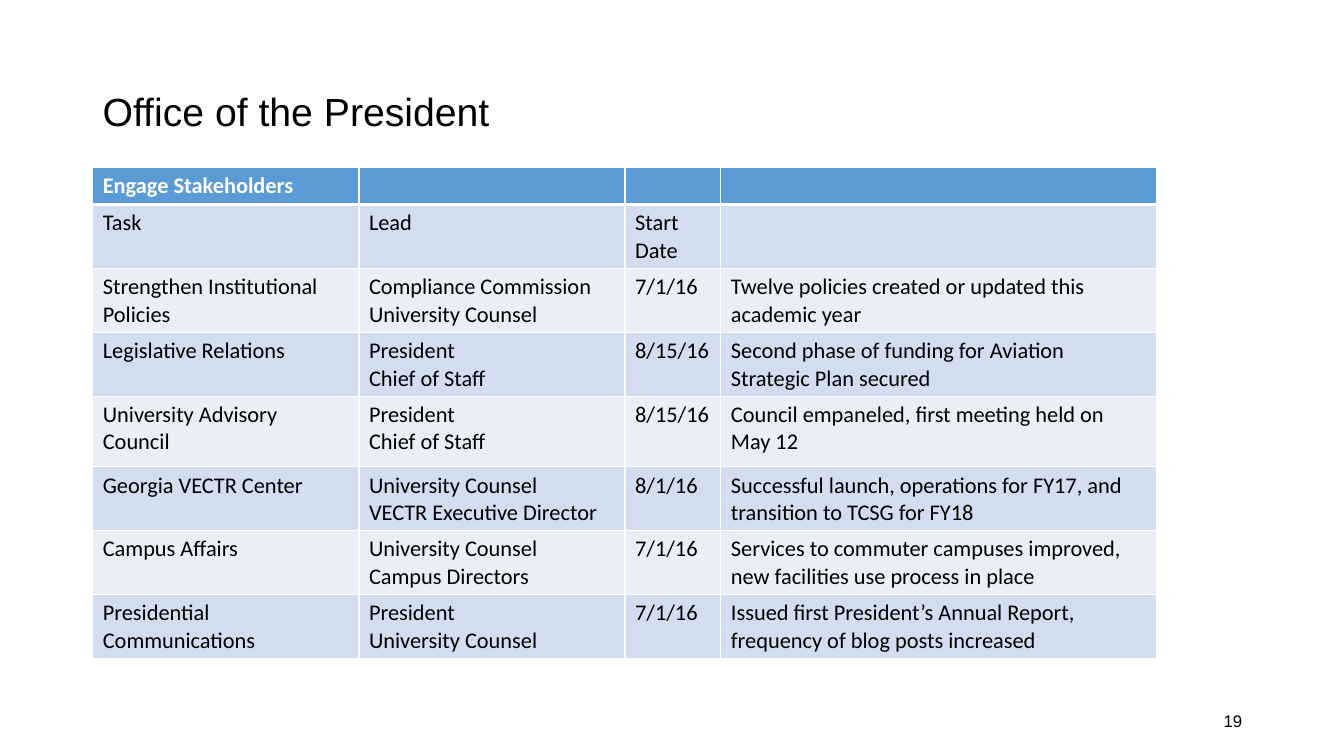
"""Build the Office of the President stakeholder engagement slide."""
from dataclasses import dataclass

from lxml.etree import SubElement
from pptx import Presentation
from pptx.dml.color import RGBColor
from pptx.enum.text import MSO_ANCHOR, PP_ALIGN
from pptx.oxml.ns import qn
from pptx.util import Inches, Pt


@dataclass(frozen=True)
class Theme:
    heading_font: str = "Arial"
    body_font: str = "Calibri"
    title_size: int = 28
    table_size: int = 16
    number_size: int = 12
    black: str = "000000"
    white: str = "FFFFFF"
    header_fill: str = "5B9BD5"
    band_fills: tuple = ("D2DEEF", "EAEFF7")


theme = Theme()


def add_text(paragraph, text, font, size, color, bold=False):
    run = paragraph.add_run()
    run.text = text
    run.font.name = font
    run.font.size = Pt(size)
    run.font.bold = bold
    run.font.color.rgb = RGBColor.from_string(color)


def add_border(cell, side, width):
    line = SubElement(cell._tc.get_or_add_tcPr(), qn(f"a:{side}"), w=str(Pt(width)))
    fill = SubElement(line, qn("a:solidFill"))
    SubElement(fill, qn("a:srgbClr"), val=theme.white)


presentation = Presentation()
presentation.slide_width = Inches(13.33)
presentation.slide_height = Inches(7.5)
slide = presentation.slides.add_slide(presentation.slide_layouts[6])

labels = [
    ("Office of the President", (0.92, 0.4, 11.5, 1.45), theme.title_size, PP_ALIGN.LEFT, 0.9),
    ("19", (9.42, 6.95, 3, 0.4), theme.number_size, PP_ALIGN.RIGHT, 1.0),
]
for text, position, size, alignment, spacing in labels:
    shape = slide.shapes.add_textbox(*map(Inches, position))
    shape.text_frame.word_wrap = True
    shape.text_frame.vertical_anchor = MSO_ANCHOR.MIDDLE
    paragraph = shape.text_frame.paragraphs[0]
    paragraph.alignment = alignment
    paragraph.line_spacing = spacing
    add_text(paragraph, text, theme.heading_font, size, theme.black)

rows = [
    ("Engage Stakeholders", "", "", ""),
    ("Task", "Lead", "Start Date", ""),
    ("Strengthen Institutional Policies", "Compliance Commission University Counsel", "7/1/16",
     "Twelve policies created or updated this academic year"),
    ("Legislative Relations", "President\nChief of Staff", "8/15/16",
     "Second phase of funding for Aviation Strategic Plan secured"),
    ("University Advisory Council", "President\nChief of Staff", "8/15/16",
     "Council empaneled, first meeting held on May 12"),
    ("Georgia VECTR Center", "University Counsel\nVECTR Executive Director", "8/1/16",
     "Successful launch, operations for FY17, and transition to TCSG for FY18"),
    ("Campus Affairs", "University Counsel\nCampus Directors", "7/1/16",
     "Services to commuter campuses improved, new facilities use process in place"),
    ("Presidential Communications", "President\nUniversity Counsel", "7/1/16",
     "Issued first President’s Annual Report, frequency of blog posts increased"),
]
column_widths = [2.64, 2.64, 0.95, 4.32]
row_heights = [0.37, 0.63, 0.63, 0.63, 0.7, 0.62, 0.62, 0.63]

table = slide.shapes.add_table(
    len(rows), len(column_widths), Inches(0.92), Inches(1.66), Inches(10.54), Inches(4.86)
).table
for column, width in zip(table.columns, column_widths):
    column.width = Inches(width)
for row, height in zip(table.rows, row_heights):
    row.height = Inches(height)

for row_index, row in enumerate(rows):
    is_header = row_index == 0
    fill_color = theme.header_fill if is_header else theme.band_fills[(row_index - 1) % 2]
    text_color = theme.white if is_header else theme.black
    for column_index, text in enumerate(row):
        cell = table.cell(row_index, column_index)
        add_border(cell, "lnL", 1)
        add_border(cell, "lnR", 1)
        add_border(cell, "lnT", 3 if row_index == 1 else 1)
        add_border(cell, "lnB", 3 if is_header else 1)
        cell.fill.solid()
        cell.fill.fore_color.rgb = RGBColor.from_string(fill_color)
        frame = cell.text_frame
        for line_index, line in enumerate(text.split("\n")):
            paragraph = frame.add_paragraph() if line_index else frame.paragraphs[0]
            if line:
                add_text(paragraph, line, theme.body_font, theme.table_size, text_color, is_header)
            else:
                SubElement(paragraph._p, qn("a:endParaRPr"), sz=str(theme.table_size * 100))

presentation.save("out.pptx")
